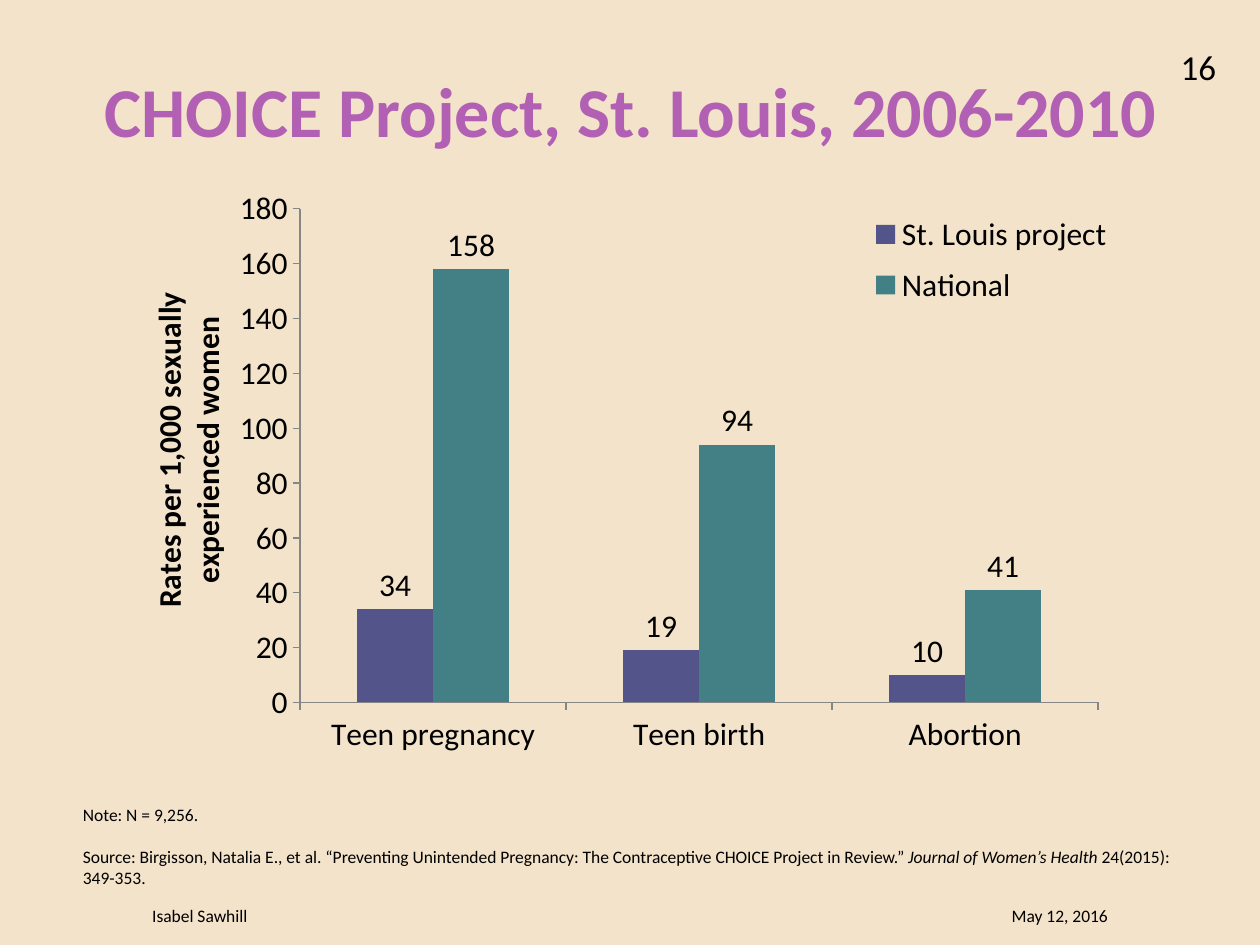
from dataclasses import dataclass

from lxml.etree import SubElement
from pptx import Presentation
from pptx.chart.data import CategoryChartData
from pptx.dml.color import RGBColor
from pptx.enum.chart import XL_CHART_TYPE as ChartType
from pptx.enum.chart import XL_LABEL_POSITION as LabelPosition
from pptx.enum.chart import XL_LEGEND_POSITION as LegendPosition
from pptx.enum.chart import XL_TICK_MARK as TickMark
from pptx.enum.text import MSO_ANCHOR as Anchor
from pptx.enum.text import PP_ALIGN as Align
from pptx.oxml.ns import qn
from pptx.util import Inches, Pt

FONT = "Calibri"
BLACK = RGBColor(0x00, 0x00, 0x00)
SAND = RGBColor(0xF3, 0xE3, 0xCA)
ORCHID = RGBColor(0xB2, 0x60, 0xB4)
INDIGO = RGBColor(0x53, 0x54, 0x8A)
TEAL = RGBColor(0x43, 0x80, 0x86)
AXIS_GRAY = RGBColor(0x86, 0x86, 0x86)


@dataclass
class Run:
    text: str
    italic: bool = False


@dataclass
class Label:
    box: tuple[float, float, float, float]
    paragraphs: list[list[Run]]
    size: float
    align: Align = Align.LEFT
    anchor: Anchor = Anchor.MIDDLE
    color: RGBColor = BLACK
    bold: bool = False
    gap: float = 0


@dataclass
class Rates:
    name: str
    values: tuple[int, ...]
    color: RGBColor


CATEGORIES = ("Teen pregnancy", "Teen birth", "Abortion")
RATES = [
    Rates("St. Louis project", (34, 19, 10), INDIGO),
    Rates("National", (158, 94, 41), TEAL),
]
LABELS = [
    Label((7.42, 0.33, 2.33, 0.4), [[Run("16")]], 20, Align.RIGHT),
    Label((0.7, 0.5, 8.61, 0.75), [[Run("CHOICE Project, St. Louis, 2006-2010")]],
          40, Align.CENTER, Anchor.BOTTOM, ORCHID, True),
    Label((0.56, 6.33, 8.87, 0.75), [
        [Run("Note: N = 9,256.")],
        [Run("Source: Birgisson, Natalia E., et al. “Preventing Unintended Pregnancy: "
             "The Contraceptive CHOICE Project in Review.” "),
         Run("Journal of Women’s Health ", True),
         Run("24(2015): 349-353.")],
    ], 10, anchor=Anchor.TOP, gap=12),
    Label((1.11, 7.12, 3, 0.3), [[Run("Isabel Sawhill")]], 10),
    Label((5.89, 7.12, 3, 0.3), [[Run("May 12, 2016")]], 10, Align.RIGHT),
]


def apply_format(target, values: dict) -> None:
    for name, value in values.items():
        setattr(target, name, value)


def style_font(font, size: float, color: RGBColor = BLACK, bold: bool = False) -> None:
    apply_format(font, {"name": FONT, "size": Pt(size), "bold": bold})
    font.color.rgb = color


def add_label(slide, label: Label) -> None:
    frame = slide.shapes.add_textbox(*map(Inches, label.box)).text_frame
    apply_format(frame, {"word_wrap": True, "vertical_anchor": label.anchor})
    for index, runs in enumerate(label.paragraphs):
        paragraph = frame.add_paragraph() if index else frame.paragraphs[0]
        paragraph.alignment = label.align
        if index:
            paragraph.space_before = Pt(label.gap)
        for part in runs:
            run = paragraph.add_run()
            run.text = part.text
            style_font(run.font, label.size, label.color, label.bold)
            run.font.italic = part.italic


def place(element, position: int, values: dict) -> None:
    for old in element.findall(qn("c:layout")):
        element.remove(old)
    layout = SubElement(element, qn("c:layout"))
    element.insert(position, layout)
    manual = SubElement(layout, qn("c:manualLayout"))
    for name, value in values.items():
        SubElement(manual, qn(f"c:{name}")).set("val", str(value))


def add_rates_chart(slide) -> None:
    data = CategoryChartData()
    data.categories = CATEGORIES
    for rates in RATES:
        data.add_series(rates.name, rates.values)
    box = map(Inches, (0.96, 1.42, 8.08, 4.75))
    chart = slide.shapes.add_chart(ChartType.COLUMN_CLUSTERED, *box, data).chart
    style_font(chart.font, 18)
    apply_format(chart, {"has_title": False, "has_legend": True})
    apply_format(chart.legend, {"position": LegendPosition.RIGHT, "include_in_layout": False})

    plot = chart.plots[0]
    apply_format(plot, {"gap_width": 150, "overlap": 0, "vary_by_categories": False})
    for series, rates in zip(plot.series, RATES):
        series.format.fill.solid()
        series.format.fill.fore_color.rgb = rates.color
        labels = series.data_labels
        apply_format(labels, {"show_value": True, "position": LabelPosition.OUTSIDE_END})
        style_font(labels.font, 18)

    for axis in (chart.category_axis, chart.value_axis):
        apply_format(axis, {"has_major_gridlines": False, "major_tick_mark": TickMark.OUTSIDE,
                            "minor_tick_mark": TickMark.NONE})
        axis.format.line.color.rgb = AXIS_GRAY
        style_font(axis.tick_labels.font, 18)
    rate_axis = chart.value_axis
    apply_format(rate_axis, {"minimum_scale": 0, "maximum_scale": 180, "major_unit": 20})
    heading = rate_axis.axis_title
    heading.text_frame.text = "Rates per 1,000 sexually experienced women"
    style_font(heading.text_frame.paragraphs[0].runs[0].font, 18, bold=True)

    edges = {"xMode": "edge", "yMode": "edge"}
    place(chart.plots[0]._element.getparent(), 0,
          {"layoutTarget": "inner", **edges, "x": 0.176, "y": 0.05, "w": 0.784, "h": 0.825})
    place(chart.legend._element, 1, {**edges, "x": 0.73, "y": 0.04, "w": 0.25, "h": 0.19})
    place(heading._element, 1, {**edges, "x": 0.02, "y": 0.18})


def main() -> None:
    deck = Presentation()
    apply_format(deck, {"slide_width": Inches(10), "slide_height": Inches(7.5)})
    slide = deck.slides.add_slide(deck.slide_layouts[6])
    slide.background.fill.solid()
    slide.background.fill.fore_color.rgb = SAND
    for label in LABELS:
        add_label(slide, label)
    add_rates_chart(slide)
    deck.save("out.pptx")


if __name__ == "__main__":
    main()
